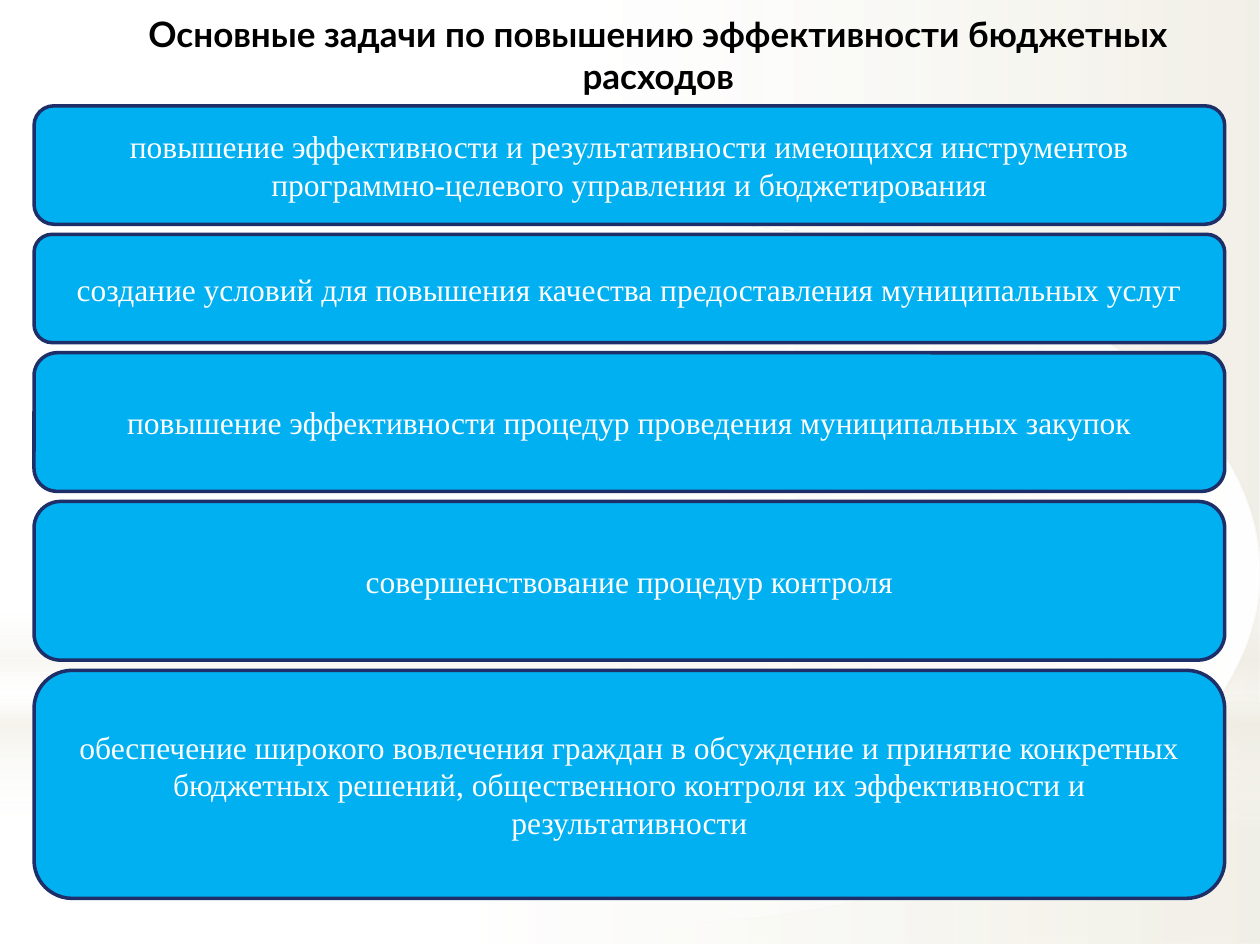
from pptx import Presentation
from pptx.dml.color import RGBColor
from pptx.enum import shapes, text
from pptx.oxml import parse_xml
from pptx.oxml.ns import nsdecls
from pptx.util import Inches, Pt

COLORS = {"white": "FFFFFF", "cream": "EEECE1", "box": "00B0F0",
          "border": "1E2E68", "title": "000000"}

TITLE = "Основные задачи по повышению эффективности бюджетных расходов"

# Task wording and box height
TASKS = [
    ("повышение эффективности и результативности имеющихся инструментов "
     "программно-целевого управления и бюджетирования", 0.94),
    ("создание условий для повышения качества предоставления муниципальных услуг", 0.86),
    ("повышение эффективности процедур проведения муниципальных закупок", 1.1),
    ("совершенствование процедур контроля", 1.26),
    ("обеспечение широкого вовлечения граждан в обсуждение и принятие конкретных "
     "бюджетных решений, общественного контроля их эффективности и результативности", 1.81),
]
LEFT, WIDTH, FIRST_TOP, GAP = 0.27, 9.45, 0.84, 0.08

# Kind, top, height, angle, stops of (position %, colour, opacity %)
BACKDROP = [
    ("RECTANGLE", 5.58, 1.91, 0,
     [(0, "white", 91), (37, "white", 76), (100, "cream", 79)]),
    ("RECTANGLE", 0, 5.58, 0,
     [(0, "white", 89), (48, "white", 62), (100, "cream", 79)]),
    ("RECTANGLE", 4.12, 2.5, 90,
     [(0, "white", 0), (29, "white", 30), (45, "cream", 40),
      (55, "white", 26), (65, "cream", 60), (100, "white", 0)]),
    ("OVAL", 1.75, 5.58, 180, [(0, "white", 100), (56, "white", 0)]),
]


def color(name):
    return RGBColor.from_string(COLORS[name])


def add_shape(slide, kind, left, top, width, height):
    shape = slide.shapes.add_shape(kind, *map(Inches, (left, top, width, height)))
    shape.shadow.inherit = False
    return shape


def fill_gradient(shape, angle, stops):
    """Fill with a linear gradient whose stops have their own opacity."""
    stop_xml = "".join(
        f'<a:gs pos="{position * 1000}"><a:srgbClr val="{COLORS[name]}">'
        f'<a:alpha val="{opacity * 1000}"/></a:srgbClr></a:gs>'
        for position, name, opacity in stops)
    gradient = parse_xml(
        f'<a:gradFill {nsdecls("a")} rotWithShape="1"><a:gsLst>{stop_xml}</a:gsLst>'
        f'<a:lin ang="{angle * 60000}" scaled="0"/></a:gradFill>')
    shape._element.spPr.prstGeom.addnext(gradient)


def write(shape, words, font, size, font_color, bold=False,
          anchor=text.MSO_ANCHOR.MIDDLE):
    frame = shape.text_frame
    frame.word_wrap = True
    frame.vertical_anchor = anchor
    paragraph = frame.paragraphs[0]
    paragraph.alignment = text.PP_ALIGN.CENTER
    run = paragraph.add_run()
    run.text = words
    run.font.name = font
    run.font.size = Pt(size)
    run.font.bold = bold
    run.font.color.rgb = color(font_color)


def main():
    presentation = Presentation()
    presentation.slide_width, presentation.slide_height = Inches(10), Inches(7.5)
    slide = presentation.slides.add_slide(presentation.slide_layouts[6])

    for kind, top, height, angle, stops in BACKDROP:
        shape = add_shape(slide, shapes.MSO_SHAPE[kind], 0, top, 10, height)
        fill_gradient(shape, angle, stops)
        shape.line.fill.background()

    title = slide.shapes.add_textbox(*map(Inches, (0.5, 0.05, WIDTH, 0.76)))
    write(title, TITLE, "Lato", 20, "title", bold=True, anchor=text.MSO_ANCHOR.TOP)

    top = FIRST_TOP
    for words, height in TASKS:
        box = add_shape(slide, shapes.MSO_SHAPE.FLOWCHART_ALTERNATE_PROCESS,
                        LEFT, top, WIDTH, height)
        box.fill.solid()
        box.fill.fore_color.rgb = color("box")
        box.line.color.rgb = color("border")
        box.line.width = Pt(2)
        write(box, words, "Times New Roman", 18, "white")
        top += height + GAP

    presentation.save("out.pptx")


if __name__ == "__main__":
    main()
